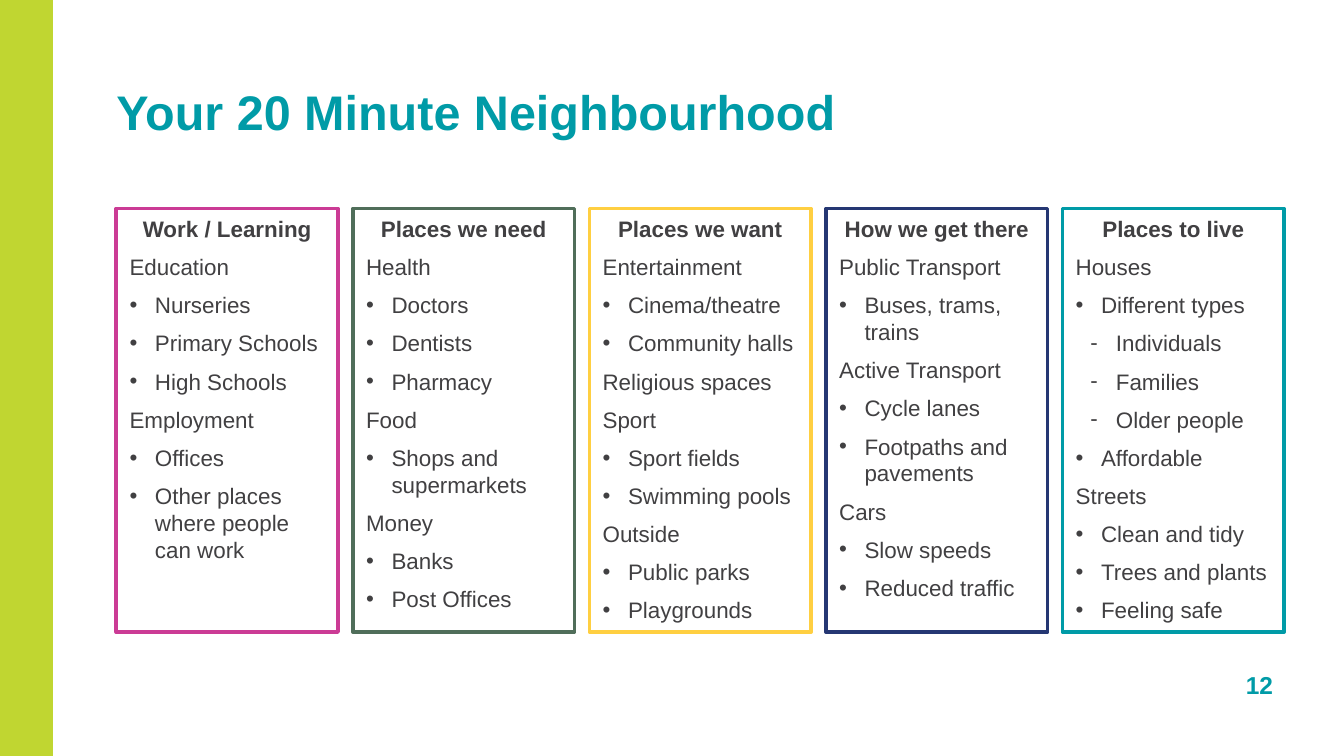
"""Build the slide of five bordered lists about a 20 minute neighbourhood."""
from lxml import etree
from pptx import Presentation, util as u
from pptx.dml import color
from pptx.enum import shapes, text
from pptx.oxml import ns

HUES = {
    "lime": "C0D631", "teal": "009BA7", "ink": "414042", "white": "FFFFFF",
    "pink": "CB3B95", "green": "506E5A", "gold": "FFCF41", "navy": "253773",
}
MARKS = {"•": (0, 0.48), "-": (1, 0.76)}
LISTS = [
    ("pink", "Work / Learning", [
        "Education", "• Nurseries", "• Primary Schools", "• High Schools",
        "Employment", "• Offices", "• Other places where people can work"]),
    ("green", "Places we need", [
        "Health", "• Doctors", "• Dentists", "• Pharmacy",
        "Food", "• Shops and supermarkets",
        "Money", "• Banks", "• Post Offices"]),
    ("gold", "Places we want", [
        "Entertainment", "• Cinema/theatre", "• Community halls",
        "Religious spaces", "Sport", "• Sport fields", "• Swimming pools",
        "Outside", "• Public parks", "• Playgrounds"]),
    ("navy", "How we get there", [
        "Public Transport", "• Buses, trams, trains",
        "Active Transport", "• Cycle lanes", "• Footpaths and pavements",
        "Cars", "• Slow speeds", "• Reduced traffic"]),
    ("teal", "Places to live", [
        "Houses", "• Different types", "- Individuals", "- Families",
        "- Older people", "• Affordable",
        "Streets", "• Clean and tidy", "• Trees and plants", "• Feeling safe"]),
]


def rgb(name):
    return color.RGBColor.from_string(HUES[name])


def write(para, words, size=12, hue="ink", bold=False, align="LEFT",
          mark=None, after=0):
    para.alignment = text.PP_ALIGN[align]
    para.space_before, para.space_after = u.Pt(0), u.Pt(after)
    if mark:
        para.level, left = MARKS[mark]
        props = para._p.get_or_add_pPr()
        props.set("marL", str(u.Cm(left)))
        props.set("indent", str(u.Cm(-0.48)))
        etree.SubElement(props, ns.qn("a:buFont"), typeface="Arial")
        etree.SubElement(props, ns.qn("a:buChar"), char=mark)
    run = para.add_run()
    run.text = words
    font = run.font
    font.name, font.size, font.bold = "Arial", u.Pt(size), bold
    font.color.rgb = rgb(hue)


class Deck:
    def __init__(self):
        self.show = Presentation()
        self.show.slide_width, self.show.slide_height = u.Cm(25.4), u.Cm(14.28)
        self.slide = self.show.slides.add_slide(self.show.slide_layouts[5])

    def rect(self, left, top, wide, high, fill, edge=None):
        box = self.slide.shapes.add_shape(
            shapes.MSO_SHAPE.RECTANGLE, *map(u.Cm, (left, top, wide, high)))
        box.shadow.inherit = False
        box.fill.solid()
        box.fill.fore_color.rgb = rgb(fill)
        if edge:
            box.line.color.rgb = rgb(edge)
            box.line.width = u.Pt(2)
        else:
            box.line.fill.background()
        return box

    def title(self, words):
        head = self.slide.shapes.title
        head.left, head.top = u.Cm(2.2), u.Cm(1.55)
        head.width, head.height = u.Cm(15.6), u.Cm(1.09)
        frame = head.text_frame
        frame.margin_left = frame.margin_right = 0
        frame.margin_top = frame.margin_bottom = 0
        frame.vertical_anchor = text.MSO_ANCHOR.BOTTOM
        frame.auto_size = text.MSO_AUTO_SIZE.NONE
        write(frame.paragraphs[0], words, size=26, hue="teal", bold=True)

    def panel(self, left, hue, head, items):
        frame = self.rect(left, 3.94, 4.19, 8, "white", hue).text_frame
        frame.word_wrap = True
        frame.vertical_anchor = text.MSO_ANCHOR.TOP
        write(frame.paragraphs[0], head, bold=True, align="CENTER", after=6)
        for item in items:
            mark = item[0] if item[0] in MARKS else None
            words = item[2:] if mark else item
            write(frame.add_paragraph(), words, mark=mark, after=6)

    def number(self, words):
        box = self.slide.shapes.add_textbox(
            u.Cm(22.3), u.Cm(12.52), u.Cm(2.01), u.Cm(0.81))
        frame = box.text_frame
        frame.word_wrap = True
        frame.vertical_anchor = text.MSO_ANCHOR.BOTTOM
        write(frame.paragraphs[0], words, size=13.1, hue="teal", bold=True,
              align="RIGHT")


def main():
    deck = Deck()
    deck.rect(0, 0, 1, 14.28, "lime")
    deck.title("Your 20 Minute Neighbourhood")
    for col, (hue, head, items) in enumerate(LISTS):
        deck.panel(2.2 + col * 4.47, hue, head, items)
    deck.number("12")
    deck.show.save("out.pptx")


if __name__ == "__main__":
    main()
